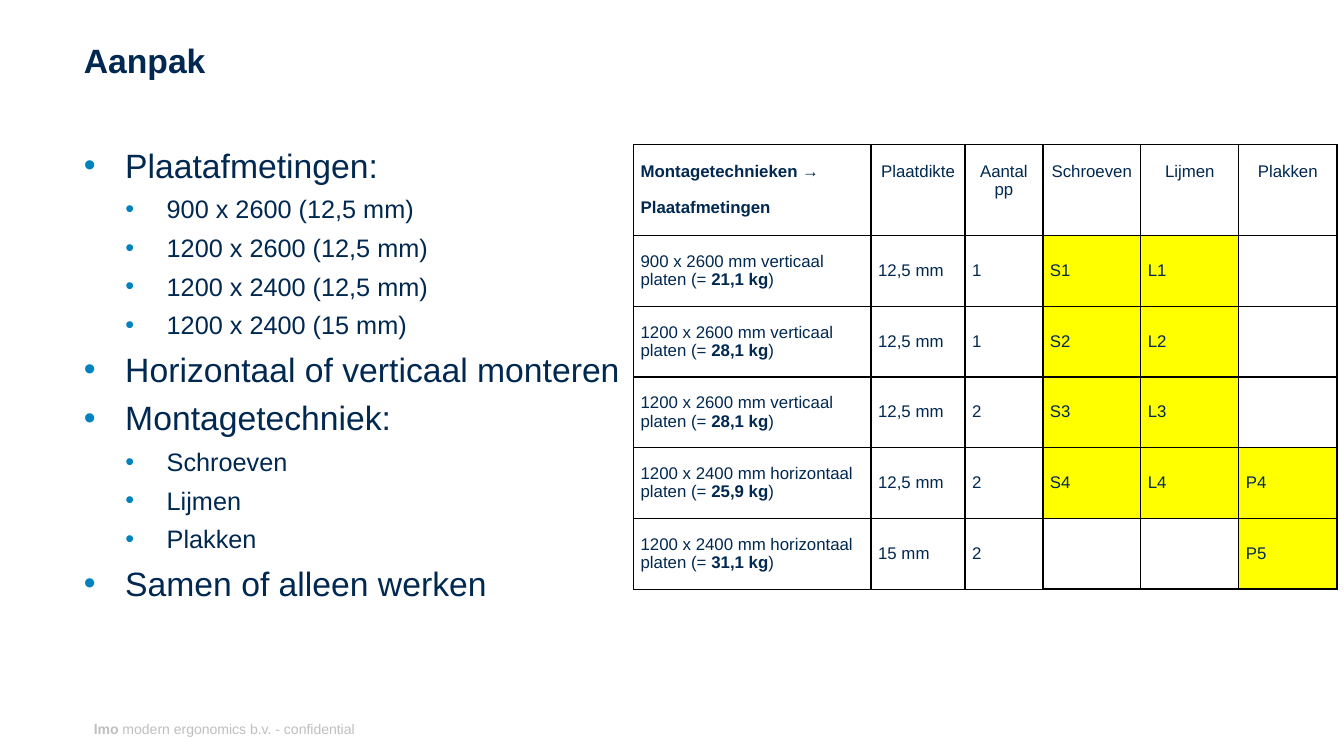
from dataclasses import dataclass

from lxml import etree
from pptx import Presentation
from pptx.dml.color import RGBColor
from pptx.enum.text import MSO_ANCHOR, PP_ALIGN
from pptx.oxml.ns import qn
from pptx.util import Inches, Pt

TOP, MIDDLE = MSO_ANCHOR.TOP, MSO_ANCHOR.MIDDLE
LEFT, CENTER = PP_ALIGN.LEFT, PP_ALIGN.CENTER


@dataclass(frozen=True)
class Theme:
    font: str = "Arial"
    navy: str = "002850"
    bullet: str = "0082BE"
    grey: str = "BFBFBF"
    highlight: str = "FFFF00"
    border: str = "000000"
    heading: int = 24
    item: int = 18
    cell: int = 12
    footer: int = 10
    cell_line: int = 13
    thin: float = 1
    thick: float = 1.5


@dataclass(frozen=True)
class Span:
    text: str
    size: int
    color: str
    bold: bool = False


@dataclass(frozen=True)
class Bullet:
    text: str
    level: int = 0


@dataclass(frozen=True)
class Panel:
    size: str
    direction: str
    weight: str
    thickness: str
    people: str
    codes: tuple[str, str, str]


THEME = Theme()

BULLETS = [
    Bullet("Plaatafmetingen:"),
    Bullet("900 x 2600 (12,5 mm)", 1),
    Bullet("1200 x 2600 (12,5 mm)", 1),
    Bullet("1200 x 2400 (12,5 mm)", 1),
    Bullet("1200 x 2400 (15 mm)", 1),
    Bullet("Horizontaal of verticaal monteren"),
    Bullet("Montagetechniek:"),
    Bullet("Schroeven", 1),
    Bullet("Lijmen", 1),
    Bullet("Plakken", 1),
    Bullet("Samen of alleen werken"),
]

HEADERS = ["Plaatdikte", "Aantal pp", "Schroeven", "Lijmen", "Plakken"]
PANELS = [
    Panel("900 x 2600", "verticaal", "21,1", "12,5 mm", "1", ("S1", "L1", "")),
    Panel("1200 x 2600", "verticaal", "28,1", "12,5 mm", "1", ("S2", "L2", "")),
    Panel("1200 x 2600", "verticaal", "28,1", "12,5 mm", "2", ("S3", "L3", "")),
    Panel("1200 x 2400", "horizontaal", "25,9", "12,5 mm", "2", ("S4", "L4", "P4")),
    Panel("1200 x 2400", "horizontaal", "31,1", "15 mm", "2", ("", "", "P5")),
]
COLUMN_WIDTHS = [2.35, 0.93, 0.77, 0.97, 0.97, 0.97]
ROW_HEIGHTS = [0.9] + [0.7] * len(PANELS)
FIRST_TECHNIQUE = 3  # column where the mounting techniques start


def apply(target, values: dict) -> None:
    for name, value in values.items():
        setattr(target, name, value)


def add_spans(para, spans: list[Span]) -> None:
    for span in spans:
        run = para.add_run()
        run.text = span.text
        apply(run.font, {"name": THEME.font, "size": Pt(span.size), "bold": span.bold})
        run.font.color.rgb = RGBColor.from_string(span.color)


def add_box(page, left: float, top: float, width: float, height: float,
            anchor=MIDDLE, inset: float = 0):
    box = page.shapes.add_textbox(Inches(left), Inches(top), Inches(width), Inches(height))
    frame = box.text_frame
    apply(frame, {"word_wrap": True, "vertical_anchor": anchor,
                  "margin_left": Inches(inset), "margin_right": Inches(inset),
                  "margin_top": Inches(inset / 2), "margin_bottom": Inches(inset / 2)})
    return frame


def add_bullets(page) -> None:
    frame = add_box(page, 0.83, 1.43, 5.44, 5.44, TOP)
    for index, bullet in enumerate(BULLETS):
        para = frame.add_paragraph() if index else frame.paragraphs[0]
        properties = para._p.get_or_add_pPr()
        properties.set("marL", str(Inches(0.41 * (bullet.level + 1))))
        properties.set("indent", str(Inches(-0.41)))
        color = etree.SubElement(properties, qn("a:buClr"))
        etree.SubElement(color, qn("a:srgbClr"), val=THEME.bullet)
        etree.SubElement(properties, qn("a:buFont"), typeface=THEME.font)
        etree.SubElement(properties, qn("a:buChar"), char="•")
        apply(para, {"level": bullet.level, "space_after": Pt(6)})
        size = THEME.item if bullet.level else THEME.heading
        add_spans(para, [Span(bullet.text, size, THEME.navy)])


def draw_borders(cell, row: int, column: int) -> None:
    technique = column >= FIRST_TECHNIQUE
    last_column = column == len(COLUMN_WIDTHS) - 1
    thick_sides = {
        "L": column == FIRST_TECHNIQUE,
        "R": column == FIRST_TECHNIQUE - 1 or last_column,
        "T": technique and row == 0,
        "B": technique and row == len(PANELS),
    }
    properties = cell._tc.get_or_add_tcPr()
    for position, (side, is_thick) in enumerate(thick_sides.items()):
        width = Pt(THEME.thick if is_thick else THEME.thin)
        line = etree.Element(qn(f"a:ln{side}"), w=str(width))
        fill = etree.SubElement(line, qn("a:solidFill"))
        etree.SubElement(fill, qn("a:srgbClr"), val=THEME.border)
        properties.insert(position, line)


def fill_cell(cell, lines: list[list[Span]], header: bool, align=LEFT) -> None:
    apply(cell, {"margin_left": Inches(0.07), "margin_right": Inches(0.07),
                 "margin_top": Pt(THEME.cell_line) if header else 0,
                 "margin_bottom": 0, "vertical_anchor": TOP if header else MIDDLE})
    for index, spans in enumerate(lines):
        para = cell.text_frame.add_paragraph() if index else cell.text_frame.paragraphs[0]
        apply(para, {"alignment": align, "line_spacing": Pt(THEME.cell_line)})
        if index:
            para.space_before = Pt(THEME.cell_line)
        add_spans(para, spans)


def cell_span(text: str, bold: bool = False) -> Span:
    return Span(text, THEME.cell, THEME.navy, bold)


def add_panel_table(page) -> None:
    table = page.shapes.add_table(
        len(ROW_HEIGHTS), len(COLUMN_WIDTHS), Inches(6.27), Inches(1.43),
        Inches(sum(COLUMN_WIDTHS)), Inches(sum(ROW_HEIGHTS))).table
    apply(table, {"first_row": False, "horz_banding": False})
    for column, width in zip(table.columns, COLUMN_WIDTHS):
        column.width = Inches(width)
    for row, height in zip(table.rows, ROW_HEIGHTS):
        row.height = Inches(height)

    # Header row, then one row per panel
    corner = [[cell_span("Montagetechnieken →", True)], [cell_span("Plaatafmetingen", True)]]
    rows = [[corner] + [[[cell_span(text)]] for text in HEADERS]]
    for panel in PANELS:
        label = [cell_span(f"{panel.size} mm {panel.direction} platen (= "),
                 cell_span(f"{panel.weight} kg", True), cell_span(")")]
        values = [panel.thickness, panel.people, *panel.codes]
        rows.append([[label]] + [[[cell_span(text)]] if text else [] for text in values])

    for row, contents in enumerate(rows):
        for column, lines in enumerate(contents):
            cell = table.cell(row, column)
            fill_cell(cell, lines, row == 0, CENTER if row == 0 and column else LEFT)
            if row and column >= FIRST_TECHNIQUE and lines:
                cell.fill.solid()
                cell.fill.fore_color.rgb = RGBColor.from_string(THEME.highlight)
            else:
                cell.fill.background()
            draw_borders(cell, row, column)


def main() -> None:
    deck = Presentation()
    apply(deck, {"slide_width": Inches(13.3), "slide_height": Inches(7.48)})
    page = deck.slides.add_slide(deck.slide_layouts[6])

    # Footer and title
    footer = add_box(page, 0.83, 7.01, 8.8, 0.4, inset=0.1)
    add_spans(footer.paragraphs[0], [
        Span("lmo", THEME.footer, THEME.grey, True),
        Span(" modern ergonomics b.v. - confidential", THEME.footer, THEME.grey)])
    title = add_box(page, 0.83, 0.21, 11.73, 0.77)
    add_spans(title.paragraphs[0], [Span("Aanpak", THEME.heading, THEME.navy, True)])

    # Content
    add_bullets(page)
    add_panel_table(page)
    deck.save("out.pptx")


if __name__ == "__main__":
    main()
